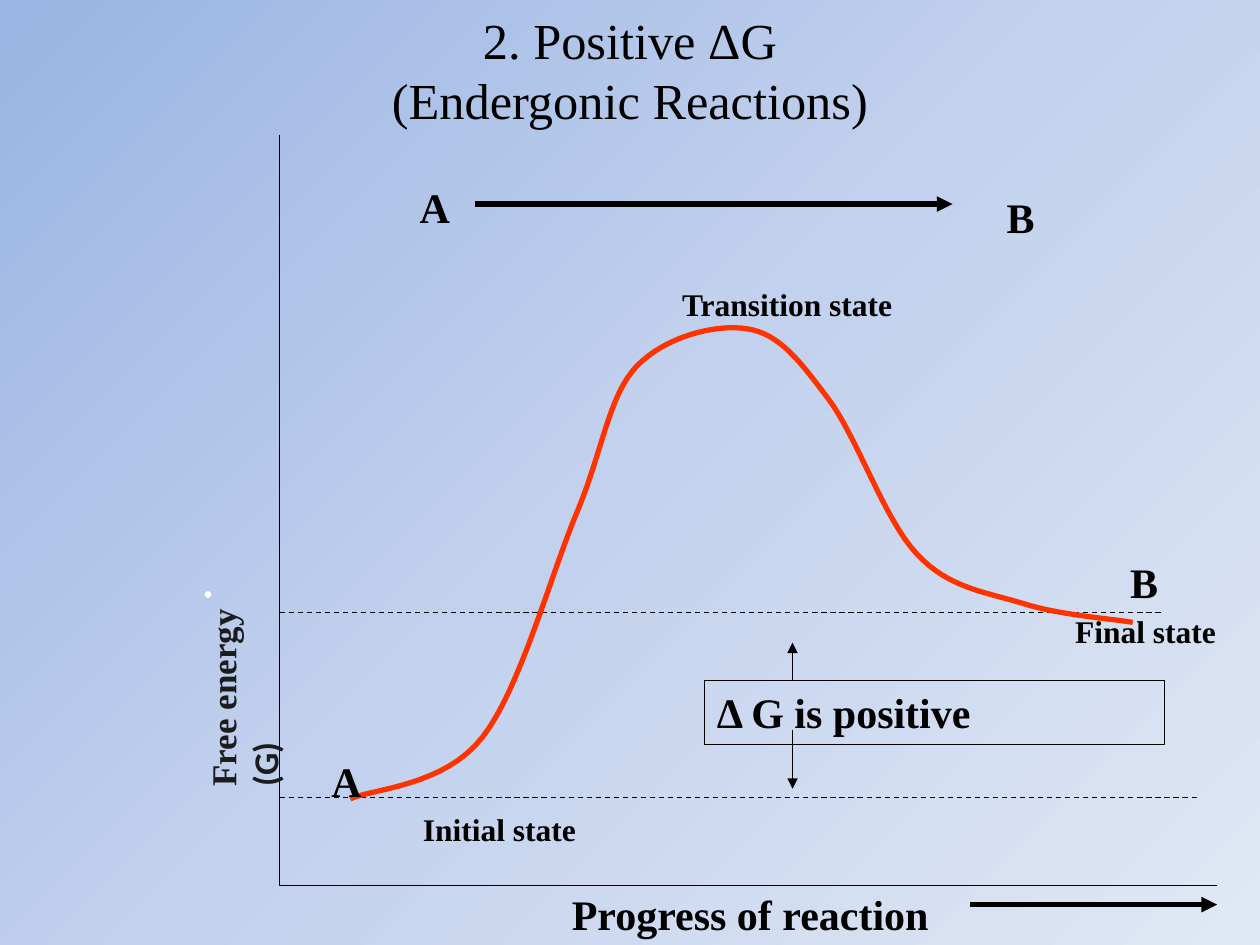
import copy

import pptx
import pptx.dml.color
import pptx.enum.dml
import pptx.enum.shapes
import pptx.enum.text
import pptx.oxml
import pptx.oxml.ns
import pptx.util
from pptx.util import Inches

BLACK = pptx.dml.color.RGBColor(0x00, 0x00, 0x00)
CHARCOAL = pptx.dml.color.RGBColor(0x1C, 0x1C, 0x1C)
WHITE = pptx.dml.color.RGBColor(0xFF, 0xFF, 0xFF)
ORANGE_RED = pptx.dml.color.RGBColor(0xFF, 0x33, 0x00)
GRADIENT = [
    pptx.dml.color.RGBColor(0x9A, 0xB5, 0xE4),
    pptx.dml.color.RGBColor(0xC2, 0xD1, 0xED),
    pptx.dml.color.RGBColor(0xE1, 0xE8, 0xF5),
]
SERIF = "Times New Roman"
ALIGN = pptx.enum.text.PP_ALIGN
ANCHOR = pptx.enum.text.MSO_ANCHOR

DIAGRAM_BOX = (2.22, 1.07, 7.44, 5.96)
TITLE_BOX = (0, 0.29, 10, 0.52)
SUBTITLE_BOX = (1.5, 4.25, 7, 1.92)

CURVE_START = (0.56, 5.27)
CURVE_SEGMENTS = [
    [(0.74, 5.19), (1.31, 5.17), (1.61, 4.78)],
    [(1.91, 4.40), (2.16, 3.46), (2.37, 2.97)],
    [(2.57, 2.48), (2.61, 2.08), (2.83, 1.84)],
    [(3.06, 1.60), (3.46, 1.50), (3.71, 1.54)],
    [(3.97, 1.58), (4.13, 1.80), (4.35, 2.09)],
    [(4.58, 2.39), (4.80, 3.06), (5.06, 3.33)],
    [(5.31, 3.60), (5.61, 3.63), (5.90, 3.72)],
    [(6.18, 3.81), (6.59, 3.84), (6.77, 3.87)],
]
LABELS = [
    ("B", 24, (5.66, 0.40, 0.43, 0.5)),
    ("A", 24, (1.01, 0.32, 0.44, 0.5)),
    ("Transition state", 18, (3.07, 1.14, 1.89, 0.4)),
    ("B", 24, (6.64, 3.30, 0.43, 0.5)),
    ("Initial state", 18, (1.02, 5.31, 1.43, 0.4)),
    ("Progress of reaction", 24, (2.19, 5.93, 3.06, 0.5)),
    ("A", 24, (0.14, 4.88, 0.61, 0.5)),
    ("Final state", 18, (6.09, 3.74, 1.44, 0.4)),
]
ARROWS = [
    ((1.55, 0.55), (5.34, 0.55), 3),
    ((4.07, 4.33), (4.07, 4.03), 0.75),
    ((4.07, 4.72), (4.07, 5.19), 0.75),
    ((5.48, 6.11), (7.44, 6.11), 3),
]
ENERGY_LEVELS = [(3.79, 7.02), (5.26, 7.30)]


def place(shape, box):
    """Move and size a shape to a box in inches."""
    shape.left, shape.top, shape.width, shape.height = map(Inches, box)


def within(box, part):
    """Turn a part given relative to a box into slide inches."""
    return (box[0] + part[0], box[1] + part[1], *part[2:])


def format_runs(paragraph, size, color, bold=False):
    """Give every run of a paragraph the serif look."""
    for run in paragraph.runs:
        run.font.name = SERIF
        run.font.size = pptx.util.Pt(size)
        run.font.bold = bold
        run.font.color.rgb = color


def set_line(shape, color, width):
    """Set line colour and width in points."""
    shape.line.color.rgb = color
    shape.line.width = pptx.util.Pt(width)


def add_line(slide, box, start, end, width):
    """Add a black straight line without shadow."""
    points = [Inches(value) for point in (start, end) for value in within(box, point)]
    connector = slide.shapes.add_connector(
        pptx.enum.shapes.MSO_CONNECTOR.STRAIGHT, *points
    )
    set_line(connector, BLACK, width)
    connector._element.spPr.append(
        connector._element.makeelement(pptx.oxml.ns.qn("a:effectLst"), {})
    )
    return connector


def add_outline(slide, points, color, width):
    """Add an open, unfilled outline through points in inches."""
    start, *others = [tuple(map(Inches, point)) for point in points]
    builder = slide.shapes.build_freeform(*start)
    builder.add_line_segments(others, close=False)
    shape = builder.convert_to_shape()
    shape.fill.background()
    shape.shadow.inherit = False
    set_line(shape, color, width)


def bezier_points(start, segments, steps=16):
    """Sample a chain of cubic Bezier segments."""
    points = [start]
    for first, second, end in segments:
        for step in range(1, steps + 1):
            t = step / steps
            weights = ((1 - t) ** 3, 3 * t * (1 - t) ** 2, 3 * t * t * (1 - t), t ** 3)
            corners = (start, first, second, end)
            points.append(tuple(
                sum(weight * corner[axis] for weight, corner in zip(weights, corners))
                for axis in (0, 1)
            ))
        start = end
    return points


def add_background(slide):
    """Fill the slide with a diagonal three-stop gradient."""
    fill = slide.background.fill
    fill.gradient()
    fill.gradient_angle = 315
    stop_list = slide._element.xpath(".//p:bg//a:gsLst")[0]
    stop_list.insert(1, copy.deepcopy(stop_list[0]))
    for index, (stop, color) in enumerate(zip(fill.gradient_stops, GRADIENT)):
        stop.position = index / 2
        stop.color.rgb = color


def fill_placeholder(placeholder, box, text, size, color, alignment, anchor):
    """Place a template placeholder and set its formatted text."""
    place(placeholder, box)
    frame = placeholder.text_frame
    frame.text = text
    frame.auto_size = pptx.enum.text.MSO_AUTO_SIZE.NONE
    frame.vertical_anchor = anchor
    paragraph = frame.paragraphs[0]
    paragraph.alignment = alignment
    format_runs(paragraph, size, color)


def add_headings(slide, title_box, subtitle_box):
    """Fill the title and subtitle placeholders."""
    fill_placeholder(
        slide.shapes.title, title_box, "2. Positive ΔG\v(Endergonic Reactions)",
        28.8, BLACK, ALIGN.CENTER, ANCHOR.MIDDLE,
    )
    fill_placeholder(
        slide.placeholders[1], subtitle_box, ".", 32, WHITE, ALIGN.LEFT, ANCHOR.TOP
    )


def add_label(slide, box, text, size, color=BLACK, alignment=ALIGN.RIGHT):
    """Add a bold one-line label."""
    label = slide.shapes.add_textbox(*map(Inches, box))
    label.text_frame.text = text
    label.text_frame.word_wrap = False
    paragraph = label.text_frame.paragraphs[0]
    paragraph.alignment = alignment
    format_runs(paragraph, size, color, bold=True)
    return label


def add_energy_axis_label(slide, box):
    """Add the upright axis label with a tab before its symbol."""
    label = add_label(slide, box, "Free energy\t", 20, CHARCOAL, ALIGN.LEFT)
    label.text_frame.word_wrap = True
    label.rotation = 270
    paragraph = label.text_frame.paragraphs[0]
    symbol = paragraph.add_run()
    symbol.text = "(G)"
    format_runs(paragraph, 20, CHARCOAL, bold=True)
    symbol.font.name = "Calibri"
    properties = paragraph._p.get_or_add_pPr()
    tabs = properties.makeelement(pptx.oxml.ns.qn("a:tabLst"), {})
    tabs.append(tabs.makeelement(
        pptx.oxml.ns.qn("a:tab"), {"pos": str(Inches(1.97)), "algn": "l"}
    ))
    properties.append(tabs)


def add_energy_change(slide, box):
    """Add the framed statement on the energy change."""
    frame = slide.shapes.add_shape(
        pptx.enum.shapes.MSO_SHAPE.RECTANGLE, *map(Inches, box)
    )
    frame.fill.background()
    frame.shadow.inherit = False
    set_line(frame, BLACK, 0.75)
    frame.text_frame.text = "Δ G is positive"
    frame.text_frame.vertical_anchor = ANCHOR.TOP
    paragraph = frame.text_frame.paragraphs[0]
    paragraph.alignment = ALIGN.LEFT
    format_runs(paragraph, 24, BLACK, bold=True)


def add_energy_diagram(slide, box):
    """Draw axes, energy levels, reaction curve and labels in a box."""
    width, height = box[2:]
    axes = [(0, 0), (0, height), (width, height)]
    add_outline(slide, [within(box, point) for point in axes], BLACK, 0.75)
    for start, end, weight in ARROWS:
        line = add_line(slide, box, start, end, weight).line._get_or_add_ln()
        line.append(line.makeelement(pptx.oxml.ns.qn("a:tailEnd"), {"type": "triangle"}))
    for level, end in ENERGY_LEVELS:
        connector = add_line(slide, box, (0, level), (end, level), 0.75)
        connector.line.dash_style = pptx.enum.dml.MSO_LINE.DASH
    curve = bezier_points(CURVE_START, CURVE_SEGMENTS)
    add_outline(slide, [within(box, point) for point in curve], ORANGE_RED, 3)
    add_energy_change(slide, within(box, (3.37, 4.33, 3.65, 0.51)))
    for text, size, part in LABELS:
        add_label(slide, within(box, part), text, size)
    add_energy_axis_label(slide, within(box, (-1.70, 3.80, 2.5, 0.44)))


def main():
    """Build and save the slide."""
    presentation = pptx.Presentation()
    presentation.slide_width = Inches(10)
    presentation.slide_height = Inches(7.5)
    slide = presentation.slides.add_slide(presentation.slide_layouts[0])
    add_background(slide)
    add_energy_diagram(slide, DIAGRAM_BOX)
    add_headings(slide, TITLE_BOX, SUBTITLE_BOX)
    presentation.save("out.pptx")


if __name__ == "__main__":
    main()
